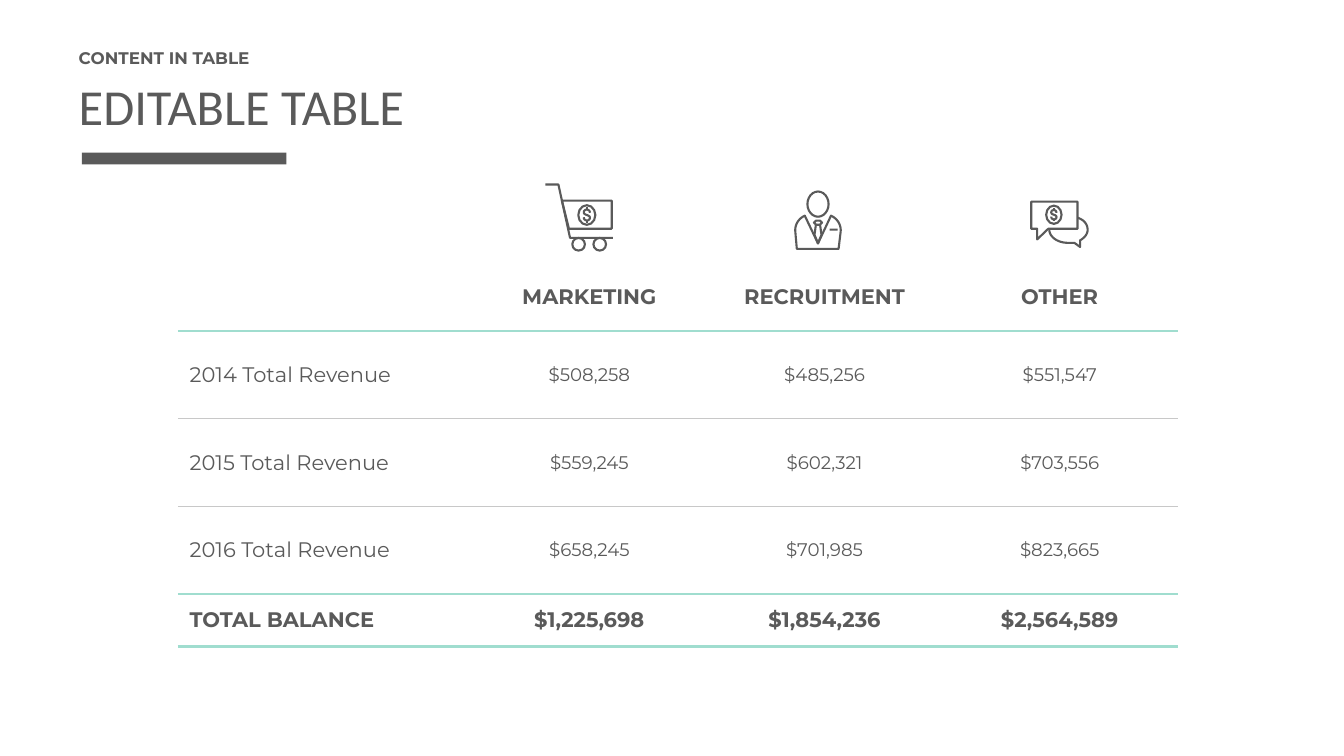
from lxml import etree
from pptx import Presentation
from pptx.dml.color import RGBColor
from pptx.enum import shapes, text
from pptx.oxml import ns
from pptx.util import Pt

THEME = {
    "ink": "5A5A5A", "mint": "A0DDCF", "rule": "C8C8C8", "white": "FFFFFF",
    "title": 36, "kicker": 12, "label": 15, "value": 13,
    "heading_font": "Calibri", "body_font": "Montserrat", "stroke": 1.5,
}
INK = RGBColor.from_string(THEME["ink"])


def finish(sp, filled=False):
    """Solid ink shape, or an ink outline with no fill."""
    sp.shadow.inherit = False
    if filled:
        sp.fill.solid()
        sp.fill.fore_color.rgb = INK
        sp.line.fill.background()
    else:
        sp.fill.background()
        sp.line.color.rgb = INK
        sp.line.width = Pt(THEME["stroke"])


def outline(group, paths, cx=0, cy=0, scale=1):
    """Draw paths of points; a step of six numbers is a cubic curve."""
    at = lambda x, y: (Pt(cx + x * scale), Pt(cy + y * scale))
    builder = group.shapes.build_freeform(*at(*paths[0][0][0]), scale=1)
    for steps, close in paths:
        here = steps[0]
        builder.move_to(*at(*here))
        points = []
        for step in steps[1:]:
            if len(step) == 6:
                for t in (i / 12 for i in range(1, 13)):
                    u = 1 - t
                    points.append(tuple(
                        u**3 * here[k] + 3 * u * u * t * step[k]
                        + 3 * u * t * t * step[k + 2] + t**3 * step[k + 4]
                        for k in (0, 1)))
            else:
                points.append(step)
            here = step[-2:]
        builder.add_line_segments([at(*point) for point in points], close=close)
    finish(builder.convert_to_shape())


prs = Presentation()
prs.slide_width, prs.slide_height = Pt(960), Pt(540)
s = prs.slides.add_slide(prs.slide_layouts[1])

# Heading
bar = s.shapes.add_shape(shapes.MSO_SHAPE.RECTANGLE, Pt(58.5), Pt(109), Pt(146), Pt(8.5))
finish(bar, filled=True)
headings = [
    (s.shapes.title, "EDITABLE TABLE", 49.7, 50.4,
     {"size": Pt(THEME["title"]), "name": THEME["heading_font"], "bold": False}),
    (s.placeholders[1], "CONTENT IN TABLE", 28.8, 24.5,
     {"size": Pt(THEME["kicker"]), "name": THEME["body_font"], "bold": True}),
]
for sp, words, top, height, style in headings:
    sp.left, sp.top, sp.width, sp.height = Pt(49), Pt(top), Pt(862), Pt(height)
    tf = sp.text_frame
    tf.text = words
    tf.vertical_anchor = text.MSO_ANCHOR.MIDDLE
    tf.auto_size = text.MSO_AUTO_SIZE.NONE
    p = tf.paragraphs[0]
    p.alignment = text.PP_ALIGN.LEFT
    p.space_before = Pt(0)
    pPr = p._p.get_or_add_pPr()
    pPr.set("marL", "0")
    pPr.set("indent", "0")
    etree.SubElement(pPr, ns.qn("a:buNone"))
    r = p.runs[0]
    r.font.color.rgb = INK
    for key, value in style.items():
        setattr(r.font, key, value)

# Revenue table
ROWS = [
    ("", "MARKETING", "RECRUITMENT", "OTHER"),
    ("2014 Total Revenue", "$508,258", "$485,256", "$551,547"),
    ("2015 Total Revenue", "$559,245", "$602,321", "$703,556"),
    ("2016 Total Revenue", "$658,245", "$701,985", "$823,665"),
    ("TOTAL BALANCE", "$1,225,698", "$1,854,236", "$2,564,589"),
]
COLUMN_WIDTHS = [209.5, 168, 168, 168]
ROW_HEIGHTS = [48.5, 62.6, 62.6, 62.6, 37.5]
# Horizontal edges from top to bottom
EDGES = [("white", 1), ("mint", 2.25), ("rule", 1), ("rule", 1), ("mint", 2.25), ("mint", 2.25)]
table = s.shapes.add_table(len(ROWS), 4, Pt(127.5), Pt(188),
                           Pt(sum(COLUMN_WIDTHS)), Pt(sum(ROW_HEIGHTS))).table
table.first_row = table.horz_banding = False
for column, width in zip(table.columns, COLUMN_WIDTHS):
    column.width = Pt(width)
for i, words in enumerate(ROWS):
    table.rows[i].height = Pt(ROW_HEIGHTS[i])
    strong = i in (0, len(ROWS) - 1)
    for j, word in enumerate(words):
        cell = table.cell(i, j)
        cell.fill.background()
        cell.vertical_anchor = text.MSO_ANCHOR.MIDDLE
        cell.margin_left = cell.margin_right = Pt(8)
        cell.margin_top = cell.margin_bottom = Pt(4)
        p = cell.text_frame.paragraphs[0]
        p.alignment = text.PP_ALIGN.CENTER if j else text.PP_ALIGN.LEFT
        if word:
            r = p.add_run()
            r.text = word
            r.font.color.rgb = INK
            size = THEME["label" if strong or j == 0 else "value"]
            for key, value in {"size": Pt(size), "name": THEME["body_font"], "bold": strong}.items():
                setattr(r.font, key, value)
        tcPr = cell._tc.get_or_add_tcPr()
        borders = [("lnL", EDGES[0]), ("lnR", EDGES[0]), ("lnT", EDGES[i]), ("lnB", EDGES[i + 1])]
        for n, (tag, (color, width)) in enumerate(borders):
            ln = etree.Element(ns.qn("a:" + tag), w=str(Pt(width)))
            fill = etree.SubElement(ln, ns.qn("a:solidFill"))
            etree.SubElement(fill, ns.qn("a:srgbClr"), val=THEME[color])
            tcPr.insert(n, ln)

# Icon outlines: each path is its steps and whether it closes
CART = [
    ([(389.5, 131.8), (398.9, 131.8), (407.2, 169.9), (437.8, 169.9)], False),
    ([(401.4, 143.3), (437, 143.3), (437, 163.4), (406.4, 163.4)], True),
]
PERSON = [
    ([(574.9, 154.1), (570.2, 156.2, 567.6, 160.9, 568.1, 165.6), (569.2, 177.8),
      (599, 177.8), (600.5, 165.6), (601, 160.9, 598.3, 156.2, 593.6, 154.1),
      (584.3, 173.9)], True),
    ([(581.4, 159.1), (582.8, 157.7), (585.8, 157.7), (587.2, 159.1),
      (585.5, 160.6), (583.1, 160.6)], True),
    ([(582.8, 160.6), (581.8, 167.8), (584.3, 173.9), (586.8, 167.8), (585.8, 160.6)], False),
]
CHAT = [
    ([(736.6, 144), (769.7, 144), (769.7, 163.4), (748.8, 163.4),
      (740.9, 171), (740.9, 163.4), (736.6, 163.4)], True),
    ([(749.5, 163.9), (749.5, 169.2, 755.3, 173.5, 763.2, 173.5), (767.5, 173.5),
      (771.5, 176.4), (771.5, 171.7), (775.1, 169.6, 776.9, 166.9, 776.9, 164.2),
      (776.9, 160.2, 774.4, 157, 769.7, 155.5)], False),
]
DOLLAR = [
    ([(2.2, -1.6), (2.2, -4.6, -2.2, -4.6, -2.2, -1.9),
      (-2.2, 0.3, 2.2, -0.3, 2.2, 1.9), (2.2, 4.6, -2.2, 4.6, -2.2, 1.6)], False),
    ([(0, -5.4), (0, -3.9)], False),
    ([(0, 3.9), (0, 5.4)], False),
]
# Ovals are centre x, centre y, width, height; the sign is x, y, scale
ICONS = [
    (CART, [(413.3, 174.5, 9, 9), (428.4, 174.5, 9, 9), (419.2, 153.6, 12.2, 14)],
     (419.2, 153.6, 1)),
    (PERSON, [(584.3, 145.8, 15.1, 18)], None),
    (CHAT, [(752.8, 153.4, 11, 13)], (752.8, 153.4, 0.85)),
]
for paths, ovals, sign in ICONS:
    icon = s.shapes.add_group_shape()
    outline(icon, paths)
    for x, y, w, h in ovals:
        finish(icon.shapes.add_shape(shapes.MSO_SHAPE.OVAL, Pt(x - w / 2), Pt(y - h / 2), Pt(w), Pt(h)))
    if sign:
        outline(icon, DOLLAR, *sign)
    else:
        pocket = icon.shapes.add_shape(shapes.MSO_SHAPE.RECTANGLE, Pt(592.6), Pt(163.4), Pt(5.8), Pt(1.4))
        finish(pocket, filled=True)

prs.save("out.pptx")
